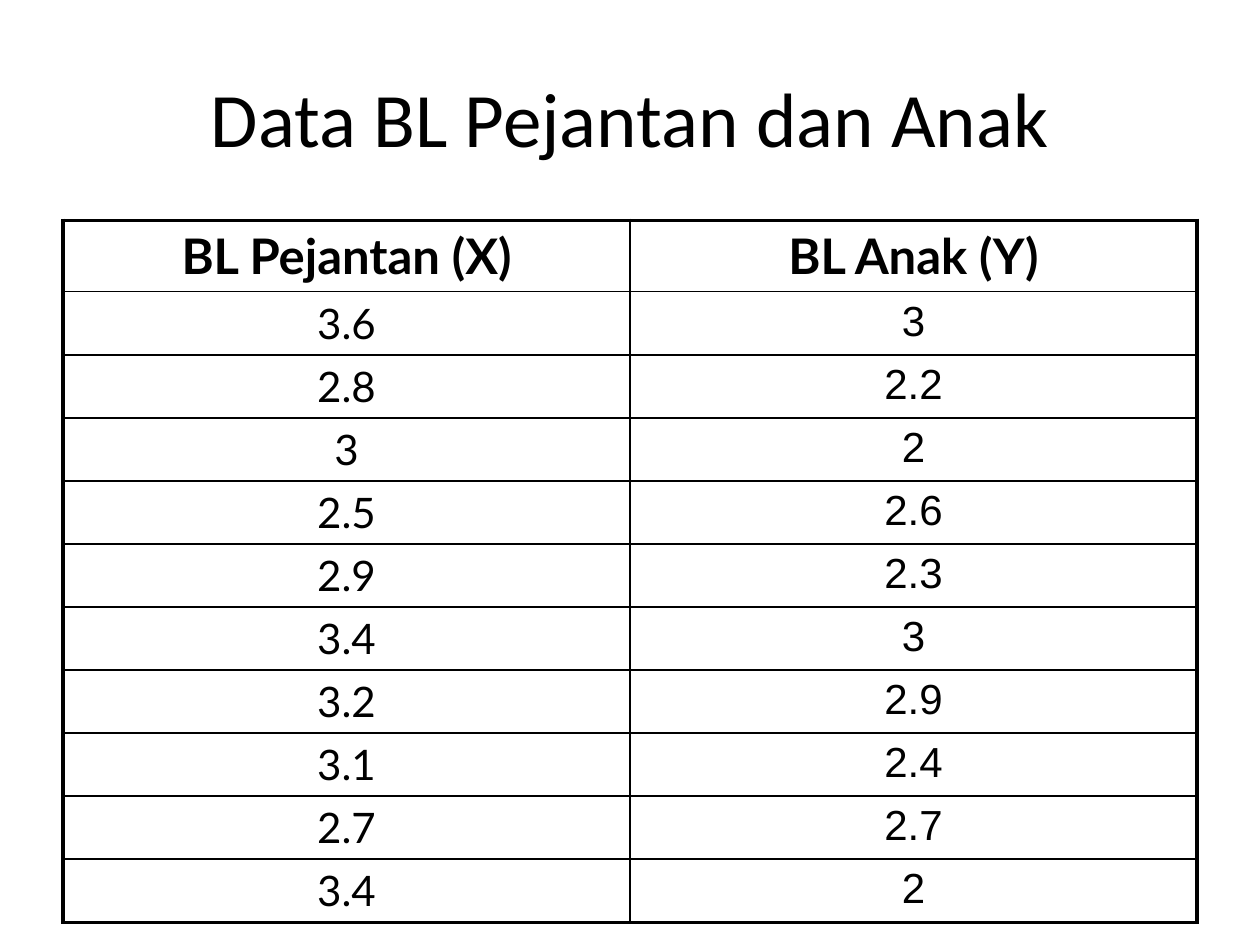
from pptx import Presentation
from pptx.dml.color import RGBColor
from pptx.enum.text import MSO_ANCHOR as ANCHOR, PP_ALIGN as ALIGN
from pptx.oxml import parse_xml
from pptx.oxml.ns import nsdecls
from pptx.util import Cm, Pt

BLACK = RGBColor(0, 0, 0)
THICK, THIN = Pt(2.25), Pt(1)

ROWS = [
    ("BL Pejantan (X)", "BL Anak (Y)"),
    ("3.6", "3"),
    ("2.8", "2.2"),
    ("3", "2"),
    ("2.5", "2.6"),
    ("2.9", "2.3"),
    ("3.4", "3"),
    ("3.2", "2.9"),
    ("3.1", "2.4"),
    ("2.7", "2.7"),
    ("3.4", "2"),
]


def write(tf, text, **font):
    p = tf.paragraphs[0]
    p.alignment = ALIGN.CENTER
    r = p.add_run()
    r.text = text
    r.font.color.rgb = BLACK
    for name, value in font.items():
        setattr(r.font, name, value)


def add_borders(cell, widths):
    tcPr = cell._tc.get_or_add_tcPr()
    for side, width in widths.items():
        tcPr.append(parse_xml(
            f'<a:ln{side} {nsdecls("a")} w="{width}"><a:solidFill>'
            f'<a:srgbClr val="{BLACK}"/></a:solidFill></a:ln{side}>'))


prs = Presentation()
prs.slide_width, prs.slide_height = Cm(25.4), Cm(19.05)
s = prs.slides.add_slide(prs.slide_layouts[5])

# Title
title = s.shapes.title
box = {"left": Cm(1.27), "top": Cm(0.76), "width": Cm(22.86), "height": Cm(3.18)}
for name, value in box.items():
    setattr(title, name, value)
title.text_frame.vertical_anchor = ANCHOR.MIDDLE
write(title.text_frame, "Data BL Pejantan dan Anak", name="Calibri", size=Pt(44))

# Table with a taller header row
table = s.shapes.add_table(len(ROWS), 2, Cm(1.27), Cm(4.44), Cm(22.86), Cm(14.14)).table
table.first_row = table.horz_banding = False
for i, row in enumerate(table.rows):
    row.height = Cm(1.27) if i else Cm(1.44)

# Cells: thick outer frame, thin inner lines
last = len(ROWS) - 1
for i, values in enumerate(ROWS):
    for j, text in enumerate(values):
        cell = table.cell(i, j)
        add_borders(cell, {
            "L": THICK if j == 0 else THIN,
            "R": THICK if j == 1 else THIN,
            "T": THICK if i == 0 else THIN,
            "B": THICK if i == last else THIN,
        })
        cell.fill.background()
        cell.vertical_anchor = ANCHOR.BOTTOM if j == 0 and i < last else ANCHOR.TOP
        write(cell.text_frame, text,
              name="Arial" if i and j else "Lato",
              size=Pt(24) if i else Pt(28),
              bold=i == 0)

prs.save("out.pptx")
